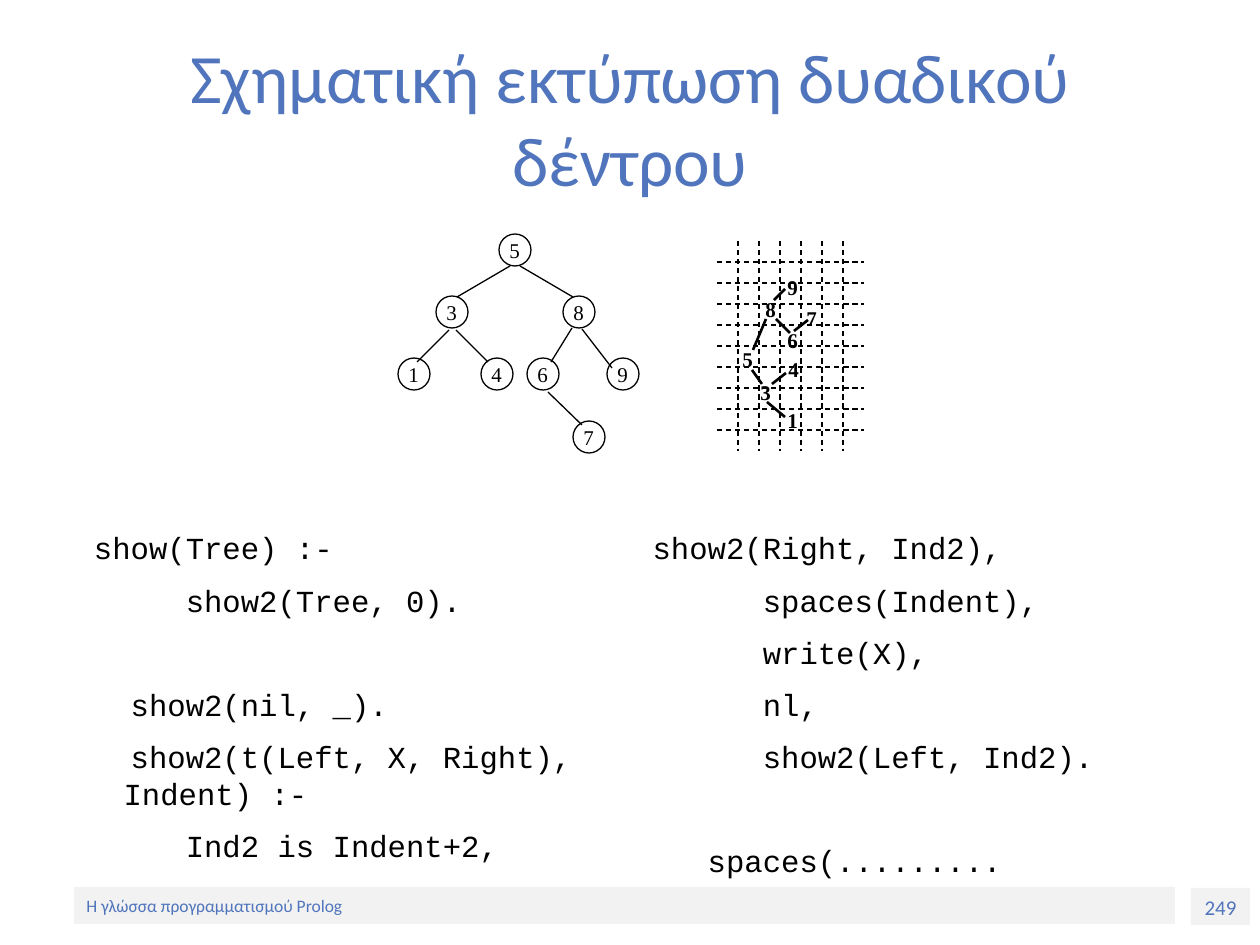
from dataclasses import dataclass

from lxml.etree import SubElement
from pptx import Presentation
from pptx.dml.color import RGBColor
from pptx.enum.dml import MSO_LINE_DASH_STYLE as Dash
from pptx.enum.shapes import MSO_CONNECTOR as Connector, MSO_SHAPE as Shape
from pptx.enum.text import MSO_ANCHOR as Anchor, MSO_AUTO_SIZE as AutoSize, PP_ALIGN as Align
from pptx.oxml.ns import qn
from pptx.util import Emu, Pt


@dataclass(frozen=True)
class Theme:
    blue: RGBColor = RGBColor(0x50, 0x75, 0xBC)
    black: RGBColor = RGBColor(0, 0, 0)
    gray: RGBColor = RGBColor(0xF2, 0xF2, 0xF2)
    sans: str = "Calibri"
    mono: str = "Courier New"
    serif: str = "Times New Roman"
    title: float = 39.6
    code: float = 17.5
    code_line: float = 21
    code_gap: float = 8.75
    label: float = 12
    footer: float = 10
    thin: float = 0.75
    thick: float = 1.5


THEME = Theme()
TITLE = "Σχηματική εκτύπωση δυαδικού δέντρου"
FOOTERS = [
    ("249", (1191, 888, 59, 37), THEME.label, Align.CENTER, Anchor.TOP),
    ("Η γλώσσα προγραμματισμού Prolog", (74, 887, 1101, 37), THEME.footer, Align.LEFT, Anchor.MIDDLE),
]
CODE_COLUMNS = [
    (63, [
        [" show(Tree) :-", "      show2(Tree, 0)."],
        ["   show2(nil, _).", "   show2(t(Left, X, Right), Indent) :-", "      Ind2 is Indent+2,"],
    ]),
    (640, [
        ["show2(Right, Ind2),", "      spaces(Indent),", "      write(X),", "      nl,", "      show2(Left, Ind2)."],
        ["   spaces(........."],
    ]),
]
CODE_TOP, CODE_WIDTH, CODE_HEIGHT, CODE_INDENT = 523, 557, 356, 48

TREE_NODES = [
    ("5", 499, 234), ("3", 436, 296), ("8", 563, 296), ("1", 398, 358),
    ("4", 481, 358), ("6", 527, 358), ("9", 607, 358), ("7", 573, 421),
]
TREE_EDGES = [
    (510, 266, 457, 297), (520, 266, 573, 297), (449, 330, 417, 362), (456, 330, 488, 362),
    (572, 328, 551, 362), (582, 329, 612, 368), (548, 392, 582, 425),
]
NODE_SIZE = 32
LABEL_WIDTH, LABEL_HEIGHT = 42, 38

GRID_LEFT, GRID_TOP, GRID_STEP = 717, 241, 21
GRID_COLUMNS, GRID_ROWS = 7, 10
PRINTED_NODES = [
    ("9", 775, 268), ("8", 753, 290), ("7", 794, 299), ("6", 775, 321),
    ("5", 730, 340), ("4", 776, 350), ("3", 748, 373), ("1", 775, 401),
]
PRINTED_EDGES = [
    (774, 300, 785, 289), (776, 319, 790, 333), (794, 331, 808, 320), (753, 350, 766, 319),
    (752, 370, 762, 384), (772, 384, 786, 373), (767, 402, 785, 417),
]


def px(*lengths):
    return [Emu(round(length * 914400 / 126)) for length in lengths]


def place(shape, *box):
    shape.left, shape.top, shape.width, shape.height = px(*box)


def style(paragraph, font, size, color, bold=False):
    for run in paragraph.runs:
        run.font.name = font
        run.font.size = Pt(size)
        run.font.color.rgb = color
        run.font.bold = bold


def add_line(shapes, ends, width, dash=None):
    line = shapes.add_connector(Connector.STRAIGHT, *px(*ends))
    line.line.color.rgb = THEME.black
    line.line.width = Pt(width)
    if dash:
        line.line.dash_style = dash
    SubElement(line._element.spPr, qn("a:effectLst"))


def add_label(shapes, text, left, top, bold=False):
    frame = shapes.add_textbox(*px(left, top, LABEL_WIDTH, LABEL_HEIGHT)).text_frame
    frame.word_wrap = True
    frame.text = text
    style(frame.paragraphs[0], THEME.serif, THEME.label, THEME.black, bold)


def add_title(slide):
    title = slide.shapes.title
    place(title, 63, 38, 1134, 158)
    frame = title.text_frame
    frame.text = TITLE
    frame.auto_size = AutoSize.NONE
    frame.vertical_anchor = Anchor.MIDDLE
    frame.paragraphs[0].alignment = Align.CENTER
    style(frame.paragraphs[0], THEME.sans, THEME.title, THEME.blue)


def add_code(placeholder, left, clauses):
    place(placeholder, left, CODE_TOP, CODE_WIDTH, CODE_HEIGHT)
    frame = placeholder.text_frame
    frame.auto_size = AutoSize.NONE
    indent = px(CODE_INDENT)[0]
    paragraph = frame.paragraphs[0]
    for clause_index, clause in enumerate(clauses):
        for line_index, text in enumerate(clause):
            gap = THEME.code_gap
            if clause_index and not line_index:
                gap += THEME.code_gap + THEME.code_line
            if clause_index or line_index:
                paragraph = frame.add_paragraph()
            else:
                gap = 0
            paragraph.text = text
            properties = paragraph._p.get_or_add_pPr()
            properties.set("marL", str(indent))
            properties.set("indent", str(-indent))
            SubElement(properties, qn("a:buNone"))
            paragraph.line_spacing = Pt(THEME.code_line)
            paragraph.space_before = Pt(gap)
            style(paragraph, THEME.mono, THEME.code, THEME.black)


def add_footer(shapes, text, box, size, alignment, anchor):
    bar = shapes.add_shape(Shape.RECTANGLE, *px(*box))
    bar.shadow.inherit = False
    bar.fill.solid()
    bar.fill.fore_color.rgb = THEME.gray
    bar.line.fill.background()
    frame = bar.text_frame
    frame.text = text
    frame.vertical_anchor = anchor
    frame.paragraphs[0].alignment = alignment
    style(frame.paragraphs[0], THEME.sans, size, THEME.blue)


def add_tree(shapes):
    for ends in TREE_EDGES:
        add_line(shapes, ends, THEME.thin)
    for text, left, top in TREE_NODES:
        node = shapes.add_shape(Shape.OVAL, *px(left, top, NODE_SIZE, NODE_SIZE))
        node.shadow.inherit = False
        node.fill.background()
        node.line.color.rgb = THEME.black
        node.line.width = Pt(THEME.thin)
        add_label(shapes, text, left - 2, top - 3)


def add_printed_tree(shapes):
    right = GRID_LEFT + GRID_COLUMNS * GRID_STEP
    bottom = GRID_TOP + GRID_ROWS * GRID_STEP
    for row in range(1, GRID_ROWS):
        y = GRID_TOP + row * GRID_STEP
        add_line(shapes, (GRID_LEFT, y, right, y), THEME.thin, Dash.DASH)
    for column in range(1, GRID_COLUMNS):
        x = GRID_LEFT + column * GRID_STEP
        add_line(shapes, (x, GRID_TOP, x, bottom), THEME.thin, Dash.DASH)
    for text, left, top in PRINTED_NODES:
        add_label(shapes, text, left, top, bold=True)
    for ends in PRINTED_EDGES:
        add_line(shapes, ends, THEME.thick)


def main():
    presentation = Presentation()
    presentation.slide_width, presentation.slide_height = px(1260, 945)
    slide = presentation.slides.add_slide(presentation.slide_layouts[3])
    for footer in FOOTERS:
        add_footer(slide.shapes, *footer)
    add_title(slide)
    for index, (left, clauses) in enumerate(CODE_COLUMNS, start=1):
        add_code(slide.placeholders[index], left, clauses)
    add_tree(slide.shapes.add_group_shape().shapes)
    add_printed_tree(slide.shapes.add_group_shape().shapes)
    presentation.save("out.pptx")


if __name__ == "__main__":
    main()
